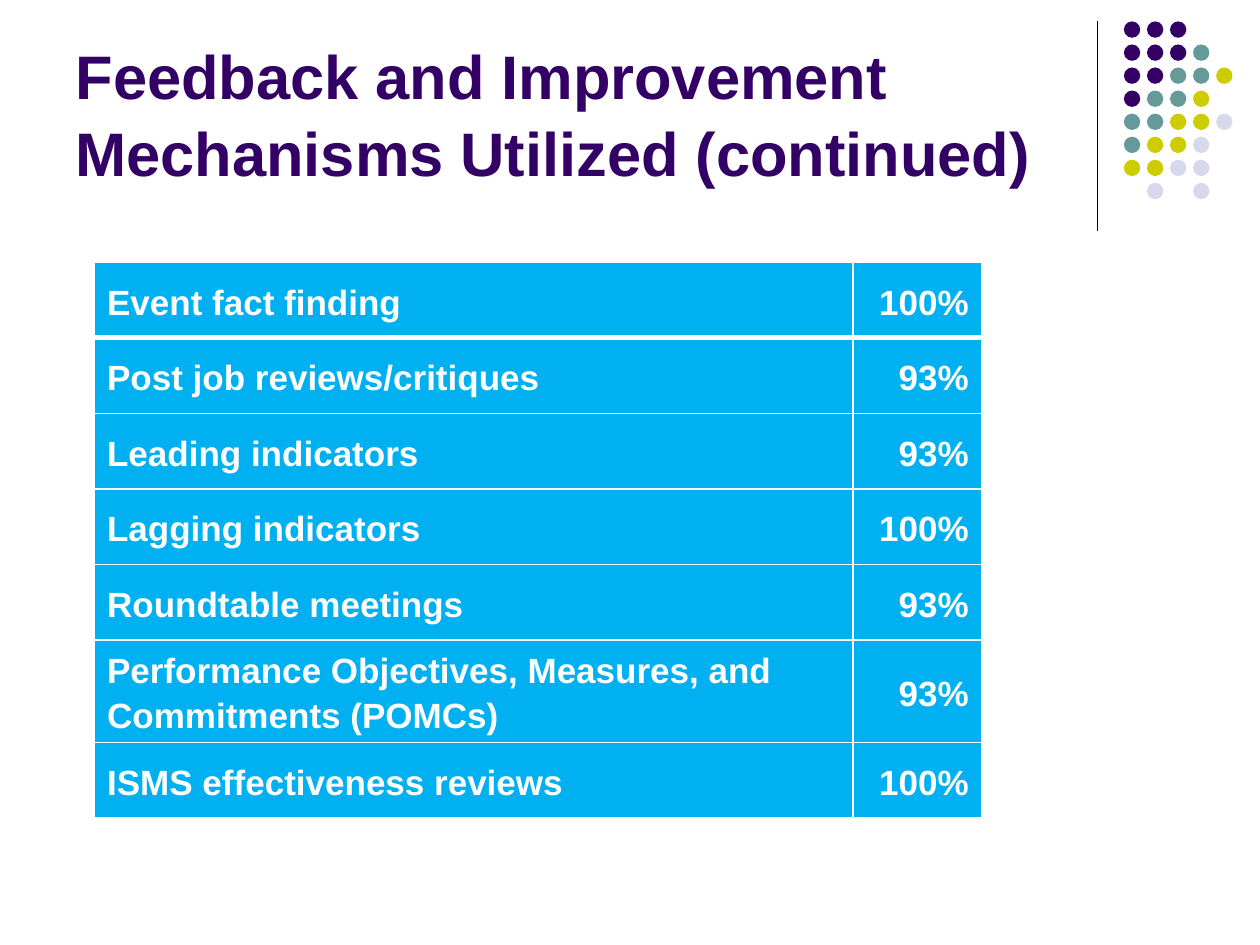
from lxml import etree
from pptx import Presentation
from pptx.dml.color import RGBColor
from pptx.enum.shapes import MSO_CONNECTOR as Connector, MSO_SHAPE as Shape
from pptx.enum.text import MSO_ANCHOR as Anchor, MSO_AUTO_SIZE as AutoSize, PP_ALIGN as Align
from pptx.oxml.ns import qn
from pptx.util import Inches, Pt

WHITE = RGBColor(0xFF, 0xFF, 0xFF)
BLACK = RGBColor(0x00, 0x00, 0x00)
PURPLE = RGBColor(0x33, 0x00, 0x66)
TEAL = RGBColor(0x66, 0x99, 0x99)
OLIVE = RGBColor(0xCC, 0xCC, 0x00)
LAVENDER = RGBColor(0xD8, 0xD8, 0xEC)
BLUE = RGBColor(0x00, 0xB0, 0xF0)

DOT_COLORS = {"P": PURPLE, "T": TEAL, "O": OLIVE, "L": LAVENDER}
DOT_ROWS = ["PPP", "PPPT", "PPTTO", "PTTO", "TTOOL", "TOOL", "OOLL", ".L.L"]

MECHANISMS = [
    ("Event fact finding", "100%"),
    ("Post job reviews/critiques", "93%"),
    ("Leading indicators", "93%"),
    ("Lagging indicators", "100%"),
    ("Roundtable meetings", "93%"),
    ("Performance Objectives, Measures, and Commitments (POMCs)", "93%"),
    ("ISMS effectiveness reviews", "100%"),
]


class SlideBuilder:
    font_name = "Arial"

    def __init__(self, page):
        self.page = page

    def style(self, para, size, color, spacing, align=Align.LEFT):
        para.alignment = align
        para.line_spacing = spacing
        font = para.font
        font.name, font.size, font.bold = self.font_name, Pt(size), True
        font.color.rgb = color

    def title(self, text, left, top, width, height):
        box = self.page.shapes.title
        box.left, box.top = Inches(left), Inches(top)
        box.width, box.height = Inches(width), Inches(height)
        frame = box.text_frame
        frame.text = text
        frame.word_wrap = True
        frame.auto_size = AutoSize.NONE
        frame.vertical_anchor = Anchor.BOTTOM
        self.style(frame.paragraphs[0], 35.1, PURPLE, 1.05)

    def vertical_line(self, x, top, bottom):
        line = self.page.shapes.add_connector(
            Connector.STRAIGHT, Inches(x), Inches(top), Inches(x), Inches(bottom))
        line.line.color.rgb = BLACK
        line.line.width = Pt(0.75)
        etree.SubElement(line._element.spPr, qn("a:effectLst"))

    def dot_grid(self, rows, left, top, pitch, size):
        group = self.page.shapes.add_group_shape()
        for row, codes in enumerate(rows):
            for column, code in enumerate(codes):
                if code not in DOT_COLORS:
                    continue
                dot = group.shapes.add_shape(
                    Shape.OVAL, Inches(left + column * pitch), Inches(top + row * pitch),
                    Inches(size), Inches(size))
                dot.shadow.inherit = False
                dot.fill.solid()
                dot.fill.fore_color.rgb = DOT_COLORS[code]
                dot.line.fill.background()

    def cell_borders(self, cell, widths):
        """Draw white borders; widths maps each side tag to points."""
        properties = cell._tc.get_or_add_tcPr()
        for position, (side, width) in enumerate(widths.items()):
            border = etree.Element(qn(f"a:{side}"), w=str(Pt(width)))
            fill = etree.SubElement(border, qn("a:solidFill"))
            etree.SubElement(fill, qn("a:srgbClr"), val=str(WHITE))
            properties.insert(position, border)

    def table(self, rows, left, top, widths, row_height):
        frame = self.page.shapes.add_table(
            len(rows), len(widths), Inches(left), Inches(top),
            Inches(sum(widths)), Inches(row_height * len(rows)))
        table = frame.table
        for column, width in zip(table.columns, widths):
            column.width = Inches(width)
        for row, values in enumerate(rows):
            for column, text in enumerate(values):
                cell = table.cell(row, column)
                cell.text = text
                cell.vertical_anchor = Anchor.MIDDLE
                cell.fill.solid()
                cell.fill.fore_color.rgb = BLUE
                align = Align.RIGHT if column else Align.LEFT
                self.style(cell.text_frame.paragraphs[0], 20, WHITE, 1.15, align)
                self.cell_borders(cell, {
                    "lnL": 1, "lnR": 1,
                    "lnT": 3 if row == 1 else 1,
                    "lnB": 3 if row == 0 else 1})


def main():
    deck = Presentation()
    deck.slide_width, deck.slide_height = Inches(10), Inches(7.5)
    title_only = deck.slide_layouts[5]
    slide = SlideBuilder(deck.slides.add_slide(title_only))
    slide.vertical_line(8.71, 0.17, 1.83)
    slide.dot_grid(DOT_ROWS, left=8.92, top=0.17, pitch=0.183, size=0.13)
    slide.title("Feedback and Improvement Mechanisms Utilized (continued)",
                0.5, 0.13, 8.25, 1.42)
    slide.table(MECHANISMS, 0.75, 2.08, widths=[6.02, 1.02], row_height=0.6)
    deck.save("out.pptx")


if __name__ == "__main__":
    main()
